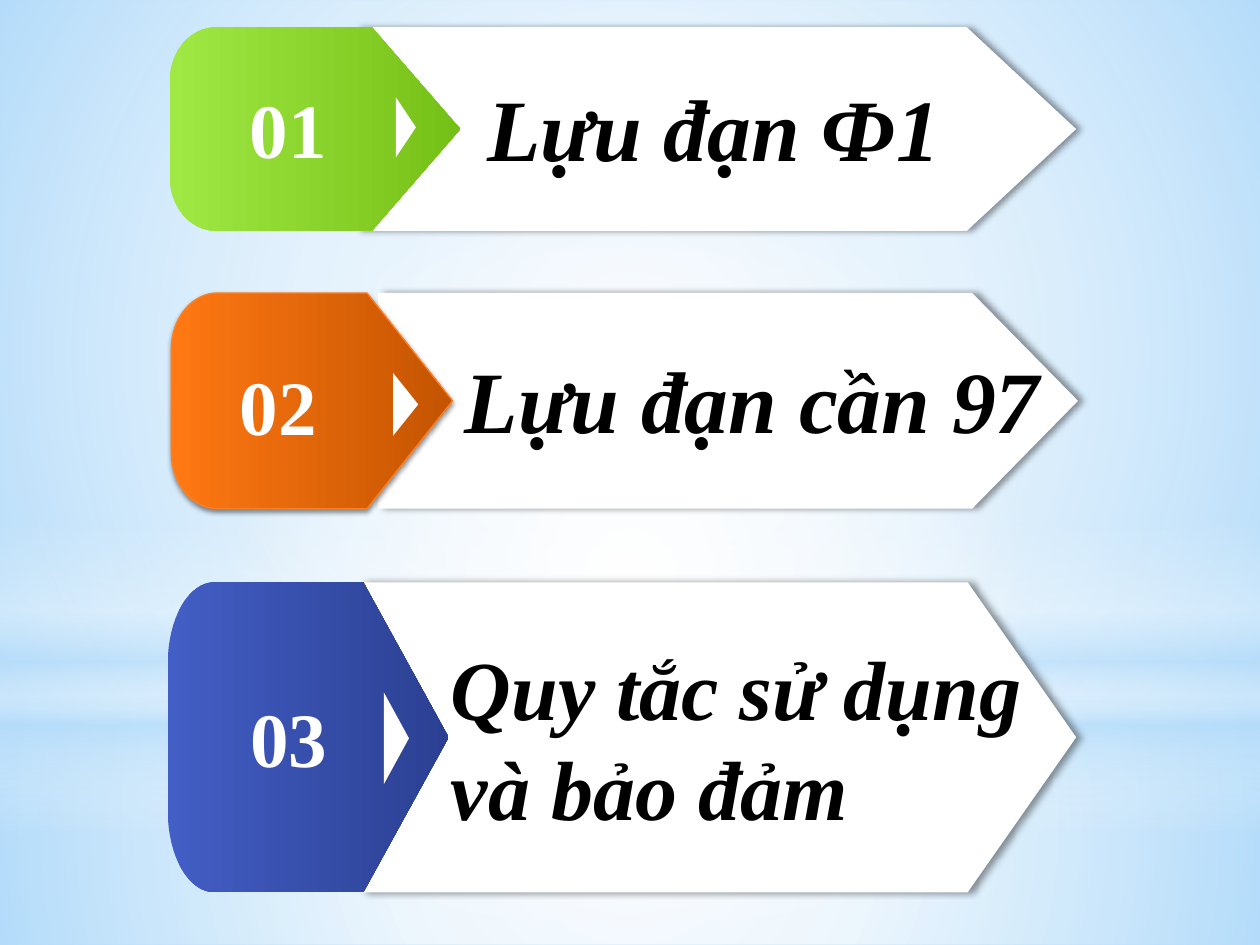
from math import cos, pi, sin

from lxml.etree import SubElement
from pptx import Presentation
from pptx.dml.color import RGBColor
from pptx.enum.shapes import MSO_SHAPE as Preset
from pptx.enum.text import MSO_ANCHOR as Anchor, MSO_AUTO_SIZE as AutoSize, PP_ALIGN as Align
from pptx.oxml import parse_xml
from pptx.oxml.ns import nsdecls, qn
from pptx.util import Pt

color = RGBColor.from_string


def set_gradient(shape, stops, angle=None):
    shape.shadow.inherit = False
    shape.line.fill.background()
    shape.fill.solid()
    marks = "".join(
        f'<a:gs pos="{pos * 1000}"><a:srgbClr val="{tone}"><a:alpha val="{alpha * 1000}"/></a:srgbClr></a:gs>'
        for pos, tone, alpha in stops
    )
    if angle is None:
        course = '<a:path path="circle"><a:fillToRect l="50000" t="50000" r="50000" b="50000"/></a:path>'
    else:
        course = f'<a:lin ang="{angle * 60000}" scaled="0"/>'
    gradient = parse_xml(f'<a:gradFill {nsdecls("a")} rotWithShape="1"><a:gsLst>{marks}</a:gsLst>{course}</a:gradFill>')
    properties = shape._element.spPr
    properties.replace(properties.find(qn("a:solidFill")), gradient)


def add_shadow(shape, alpha, blur, distance, angle):
    effects = shape._element.spPr.find(qn("a:effectLst"))
    outer = SubElement(effects, qn("a:outerShdw"), blurRad=str(Pt(blur)), dist=str(Pt(distance)),
                       dir=str(angle * 60000), algn="ctr", rotWithShape="0")
    tone = SubElement(outer, qn("a:srgbClr"), val="000000")
    SubElement(tone, qn("a:alpha"), val=str(alpha * 1000))


prs = Presentation()
prs.slide_width, prs.slide_height = Pt(720), Pt(540)
slide = prs.slides.add_slide(prs.slide_layouts[6])
shapes = slide.shapes
slide.background.fill.solid()
slide.background.fill.fore_color.rgb = color("B4DCFA")

WHITE, SKY = "FFFFFF", "B4DCFA"
glows = [
    (Preset.RECTANGLE, 402, 138, [(0, WHITE, 91), (37, WHITE, 76), (100, SKY, 79)], None),
    (Preset.RECTANGLE, 0, 402, [(0, WHITE, 89), (48, WHITE, 62), (100, SKY, 79)], None),
    (Preset.RECTANGLE, 297, 180, [(0, WHITE, 0), (29, WHITE, 30), (45, SKY, 40),
                                  (55, WHITE, 26), (65, SKY, 60), (100, WHITE, 0)], 90),
    (Preset.OVAL, 126, 402, [(0, WHITE, 100), (56, WHITE, 0)], None),
]
for preset, top, height, stops, angle in glows:
    glow = shapes.add_shape(preset, 0, Pt(top), Pt(720), Pt(height))
    set_gradient(glow, stops, angle)

bands = [
    dict(top=15.6, height=116.4, body=(203, 552.5, 615), tab=(97, 212.5, 263),
         tones=("A0E844", "75C016"), edge=None, pointer=(214.6, 67, 34.6, 11.5),
         number="01", number_box=(114.5, 42.5, 100.8, 60.5),
         title="Lựu đạn Ф1", title_box=(271.4, 38.9, 316, 67.7), size=50),
    dict(top=167.4, height=123.3, body=(216, 555.5, 616), tab=(97.9, 209.7, 258.6),
         tones=("FF7813", "C45400"), edge="FF8021", pointer=(213.8, 223.9, 36, 14.4),
         number="02", number_box=(129.6, 200.9, 59, 60.5),
         title="Lựu đạn cần 97", title_box=(258.5, 194.4, 357, 67.7), size=50),
    dict(top=332.8, height=177.1, body=(206.6, 553, 615), tab=(95.9, 207.6, 256.3),
         tones=("435EC5", "2B4092"), edge=None, pointer=(200.2, 414.7, 52.6, 14.4),
         number="03", number_box=(135.4, 391, 59, 60.5),
         title="Quy tắc sử dụng và bảo đảm", title_box=(250.6, 360, 391.7, 123.8), size=48),
]
CORNER_WIDTH, CORNER_SHARE, CORNER_STEPS = 26.5, 0.26, 16

for band in bands:
    top, height = band["top"], band["height"]
    middle, bottom = top + height / 2, top + height

    left, shoulder, tip = band["body"]
    body_outline = [(left, top), (shoulder, top), (tip, middle), (shoulder, bottom), (left, bottom)]

    left, shoulder, tip = band["tab"]
    corner_height = CORNER_SHARE * height
    turns = [pi / 2 * step / CORNER_STEPS for step in range(CORNER_STEPS + 1)]
    upper = [(left + CORNER_WIDTH * (1 - cos(turn)), top + corner_height * (1 - sin(turn))) for turn in turns]
    lower = [(x, top + bottom - y) for x, y in reversed(upper)]
    tab_outline = upper + [(shoulder, top), (tip, middle), (shoulder, bottom)] + lower

    pieces = []
    for outline in (body_outline, tab_outline):
        points = [(Pt(x), Pt(y)) for x, y in outline]
        builder = shapes.build_freeform(*points[0])
        builder.add_line_segments(points[1:], close=True)
        pieces.append(builder.convert_to_shape())
    body, tab = pieces

    body.fill.solid()
    body.fill.fore_color.rgb = color(WHITE)
    body.line.fill.background()
    body.shadow.inherit = False
    add_shadow(body, 40, 4, 3, 0)

    start, end = band["tones"]
    set_gradient(tab, [(0, start, 100), (100, end, 100)], 0)
    if band["edge"]:
        tab.line.color.rgb = color(band["edge"])
        tab.line.width = Pt(0.75)
        add_shadow(tab, 45, 3.1, 1.8, 90)

    pointer = shapes.add_shape(Preset.ISOSCELES_TRIANGLE, *map(Pt, band["pointer"]))
    pointer.rotation = 90
    pointer.fill.solid()
    pointer.fill.fore_color.rgb = color(WHITE)
    pointer.line.fill.background()
    pointer.shadow.inherit = False

    labels = [
        (band["number"], band["number_box"], 44, WHITE, False, Align.CENTER, Anchor.MIDDLE),
        (band["title"], band["title_box"], band["size"], "000000", True, Align.LEFT, Anchor.TOP),
    ]
    for wording, box, size, tone, italic, align, anchor in labels:
        label = shapes.add_textbox(*map(Pt, box))
        frame = label.text_frame
        frame.text = wording
        frame.word_wrap = italic
        frame.auto_size = AutoSize.SHAPE_TO_FIT_TEXT
        frame.vertical_anchor = anchor
        paragraph = frame.paragraphs[0]
        paragraph.alignment = align
        font = paragraph.runs[0].font
        font.name, font.size = "Times New Roman", Pt(size)
        font.bold, font.italic = True, italic
        font.color.rgb = color(tone)

prs.save("out.pptx")
